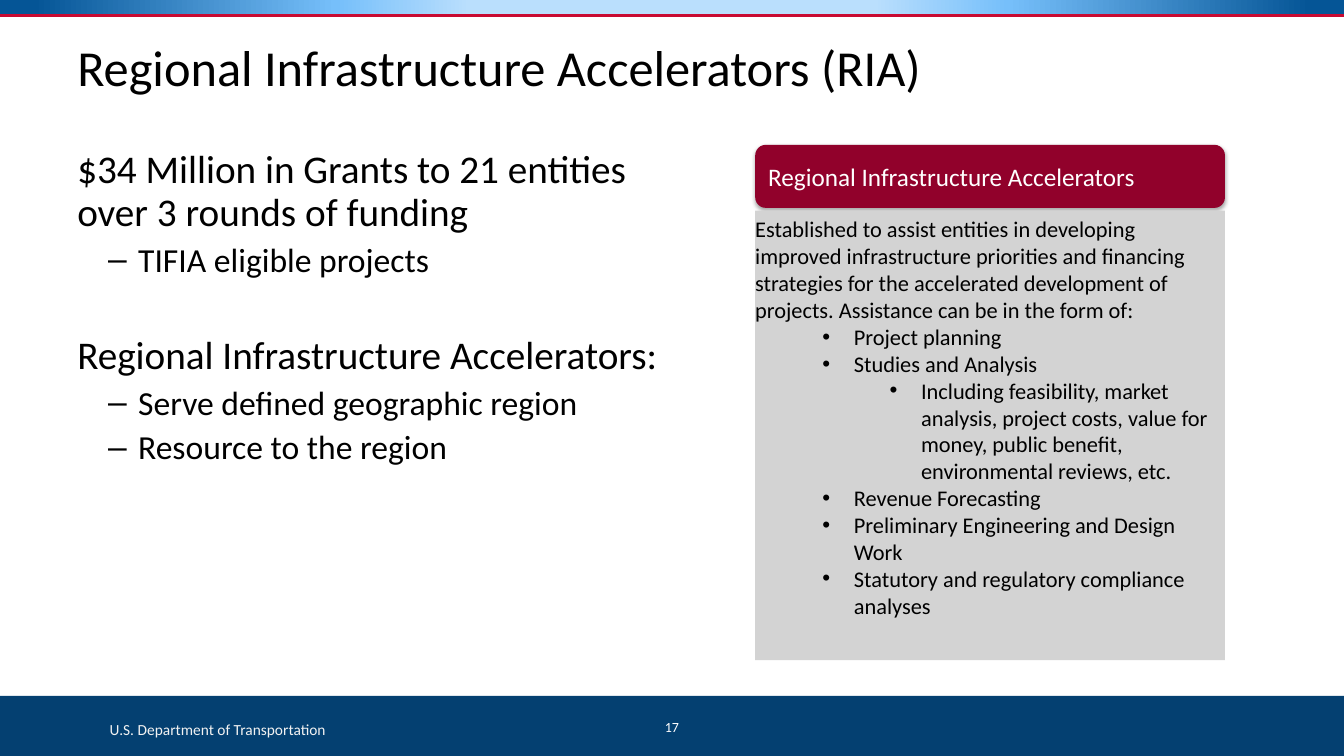
from lxml import etree
from pptx import Presentation
from pptx.dml.color import RGBColor
from pptx.enum.shapes import MSO_CONNECTOR, MSO_SHAPE
from pptx.enum.text import MSO_ANCHOR, MSO_AUTO_SIZE, PP_ALIGN
from pptx.oxml.ns import qn
from pptx.util import Pt

RECT, ROUND = MSO_SHAPE.RECTANGLE, MSO_SHAPE.ROUNDED_RECTANGLE
TOP, MIDDLE = MSO_ANCHOR.TOP, MSO_ANCHOR.MIDDLE
LEFT, CENTER = PP_ALIGN.LEFT, PP_ALIGN.CENTER
FONT = "Calibri"
COLORS = {"black": "000000", "white": "FFFFFF", "pale": "F2F2F2", "navy": "044071",
          "red": "C80A32", "wine": "91012B", "gray": "D3D3D3"}

# Content
TITLE = "Regional Infrastructure Accelerators (RIA)"
# level, space before, text
BODY = [
    (0, 0, "$34 Million in Grants to 21 entities over 3 rounds of funding"),
    (1, 6, "TIFIA eligible projects"),
    (0, 40, "Regional Infrastructure Accelerators:"),
    (1, 6, "Serve defined geographic region"),
    (1, 6, "Resource to the region"),
]
HEAD = "Regional Infrastructure Accelerators"
# level, text
CARD = [
    (0, "Established to assist entities in developing improved infrastructure priorities "
        "and financing strategies for the accelerated development of projects. "
        "Assistance can be in the form of:"),
    (1, "Project planning"),
    (1, "Studies and Analysis"),
    (2, "Including feasibility, market analysis, project costs, value for money, "
        "public benefit, environmental reviews, etc."),
    (1, "Revenue Forecasting"),
    (1, "Preliminary Engineering and Design Work"),
    (1, "Statutory and regulatory compliance analyses"),
]
AGENCY, PAGE = "U.S. Department of Transportation", "17"
# distance from the centre in percent, colour
GLOW = [(15, "BADFFD"), (25, "76BFFA"), (47.5, "055596")]

# Layout: left, top, width, height
WIDE, HIGH = 960, 540
BAND_H, FOOT_H = 11, 43
CARD_X, CARD_W = 539.5, 335.5
BODY_SIZE = [28, 24]
BODY_DENT = [(0, 0), (43.5, -21.5)]
CARD_DENT = [(0, 0), (70.5, -22.5), (118.5, -22.5)]


def color(name):
    return RGBColor.from_string(COLORS[name])


def place(shape, box):
    shape.left, shape.top, shape.width, shape.height = map(Pt, box)


def node(parent, tag, **attrs):
    item = etree.SubElement(parent, qn("a:" + tag))
    for key, value in attrs.items():
        item.set(key, str(value))
    return item


def frame(shape, anchor=TOP):
    text = shape.text_frame
    text.word_wrap = True
    text.auto_size = MSO_AUTO_SIZE.NONE
    text.vertical_anchor = anchor
    return text


def write(text, line, size, ink="black", align=LEFT, level=0,
          dent=(0, 0), mark=None, gap=0, lead=1.0):
    first = text.paragraphs[0]
    para = first if not first.runs else text.add_paragraph()
    props = para._p.get_or_add_pPr()
    props.set("marL", str(Pt(dent[0])))
    props.set("indent", str(Pt(dent[1])))
    if mark:
        node(props, "buFont", typeface="Arial")
        node(props, "buChar", char=mark)
    else:
        node(props, "buNone")
    para.level, para.alignment = level, align
    para.space_before, para.line_spacing = Pt(gap), lead
    run = para.add_run()
    run.text = line
    run.font.name, run.font.size = FONT, Pt(size)
    run.font.color.rgb = color(ink)


def block(kind, box, fill=None):
    shape = slide.shapes.add_shape(kind, *map(Pt, box))
    shape.shadow.inherit = False
    shape.line.fill.background()
    if fill:
        shape.fill.solid()
        shape.fill.fore_color.rgb = color(fill)
    return shape


def label(box, line, size, ink, align=LEFT):
    shape = slide.shapes.add_textbox(*map(Pt, box))
    write(frame(shape), line, size, ink, align)


deck = Presentation()
deck.slide_width, deck.slide_height = Pt(WIDE), Pt(HIGH)
slide = deck.slides.add_slide(deck.slide_layouts[1])

# Top band, light in the middle and dark at both ends
band = block(RECT, (0, 0, WIDE, BAND_H))
grad = etree.Element(qn("a:gradFill"))
stops = node(grad, "gsLst")
ends = [(50 - far, tint) for far, tint in GLOW] + [(50 + far, tint) for far, tint in GLOW]
for spot, tint in sorted(ends):
    node(node(stops, "gs", pos=int(spot * 1000)), "srgbClr", val=tint)
node(grad, "lin", ang=0, scaled=0)
band._element.spPr.insert(2, grad)

rule = slide.shapes.add_connector(MSO_CONNECTOR.STRAIGHT, 0, Pt(BAND_H), Pt(WIDE), Pt(BAND_H))
rule.line.color.rgb, rule.line.width = color("red"), Pt(2.5)
node(rule._element.spPr, "effectLst")

# Footer
block(RECT, (0, HIGH - FOOT_H, WIDE, FOOT_H), "navy")
label((71.25, 511, 180, 21), AGENCY, 11, "pale")
label((447, 510, 66, 29), PAGE, 10, "white", CENTER)

# Title and body
title, body = slide.shapes.title, slide.placeholders[1]
place(title, (48, 29, 864, 43))
write(frame(title, MIDDLE), TITLE, 36, lead=0.9)
place(body, (48, 103.5, 460, 378))
text = frame(body)
for level, gap, line in BODY:
    write(text, line, BODY_SIZE[level], level=level, dent=BODY_DENT[level],
          mark="–" if level else None, gap=gap, lead=0.9)

# Card
head = block(ROUND, (CARD_X, 103.5, CARD_W, 45), "wine")
glow = node(head._element.spPr.find(qn("a:effectLst")), "outerShdw", blurRad=Pt(3.1),
            dist=Pt(1.8), dir=5400000, rotWithShape=0)
node(node(glow, "srgbClr", val=COLORS["black"]), "alpha", val=35000)
write(frame(head, MIDDLE), HEAD, 18, "white")

card = block(RECT, (CARD_X, 150.5, CARD_W, 321), "gray")
text = frame(card)
text.margin_left = 0
for level, line in CARD:
    write(text, line, 16, level=level, dent=CARD_DENT[level], mark="•" if level else None)

deck.save("out.pptx")
